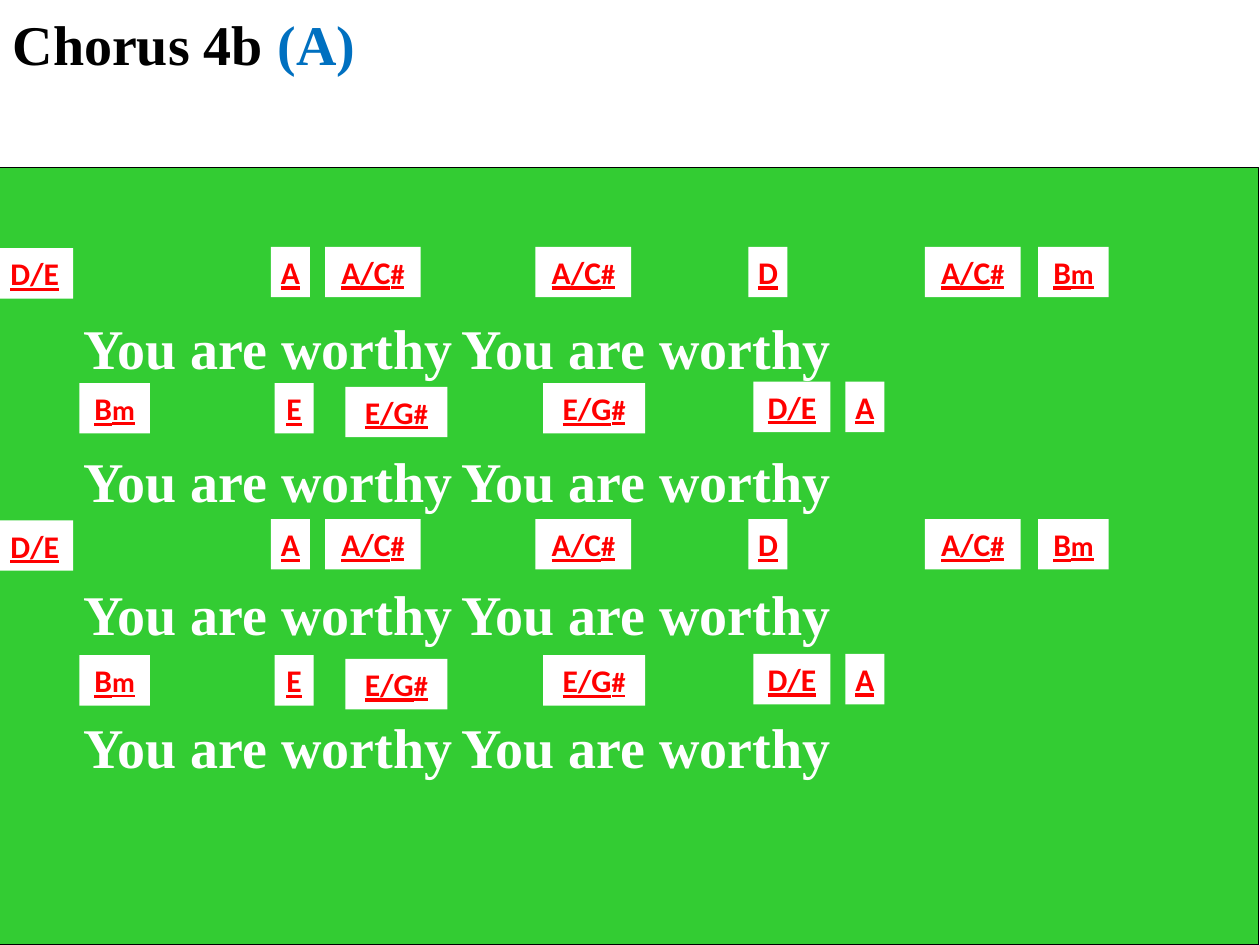
from lxml import etree
from pptx import Presentation
from pptx import util as u
from pptx.dml.color import RGBColor
from pptx.enum import shapes, text
from pptx.oxml.ns import qn

GREEN = RGBColor(0x33, 0xCC, 0x33)
WHITE = RGBColor(0xFF, 0xFF, 0xFF)
BLACK = RGBColor(0, 0, 0)
BLUE = RGBColor(0, 0x70, 0xC0)
RED = RGBColor(0xFF, 0, 0)

HEAD = {"name": "Times New Roman", "size": u.Pt(32), "bold": True}
CHORD = {"name": "Calibri", "size": u.Pt(18), "bold": True, "underline": True}
SMALL = CHORD | {"size": u.Pt(16)}

LINE = "You are worthy"
WIDTHS = {"A": 0.31, "D": 0.31, "E": 0.31, "Bm": 0.56, "D/E": 0.61,
          "A/C#": 0.76, "E/G#": 0.81}
# Chord, left and top; the whole pattern is sung twice
CHORDS = [
    ("D/E", -0.03, 1.97), ("A", 2.15, 1.96), ("A/C#", 2.58, 1.96),
    ("A/C#", 4.25, 1.96), ("D", 5.94, 1.96), ("A/C#", 7.34, 1.96),
    ("Bm", 8.24, 1.96),
    ("Bm", 0.63, 3.04), ("E", 2.18, 3.04), ("E/G#", 2.74, 3.07),
    ("E/G#", 4.31, 3.04), ("D/E", 5.98, 3.03), ("A", 6.71, 3.03),
]
REPEAT = 2.16


def put(obj, **vals):
    for key, val in vals.items():
        setattr(obj, key, val)


def place(shape, left, top, width, height):
    put(shape, left=u.Inches(left), top=u.Inches(top),
        width=u.Inches(width), height=u.Inches(height))


def add_run(para, words, form, color):
    run = para.add_run()
    run.text = words
    put(run.font, **form)
    run.font.color.rgb = color


def add_box(slide, area, fill):
    box = slide.shapes.add_shape(shapes.MSO_SHAPE.RECTANGLE,
                                 *map(u.Inches, area))
    box.shadow.inherit = False
    box.fill.solid()
    box.fill.fore_color.rgb = fill
    box.line.fill.background()
    return box


def add_panel(slide):
    panel = add_box(slide, (-0.03, 1.33, 10.02, 6.17), GREEN)
    panel.line.color.rgb = BLACK
    panel.line.width = u.Pt(0.75)
    slide.shapes.element.insert(2, panel.element)  # behind the placeholders


def add_title(slide):
    title = slide.shapes.title
    place(title, 0, 0.02, 3.33, 0.64)
    title.fill.solid()
    title.fill.fore_color.rgb = WHITE
    put(title.text_frame, auto_size=text.MSO_AUTO_SIZE.NONE, word_wrap=False,
        vertical_anchor=text.MSO_ANCHOR.MIDDLE)
    para = title.text_frame.paragraphs[0]
    para.alignment = text.PP_ALIGN.LEFT
    add_run(para, "Chorus 4b", HEAD, BLACK)
    add_run(para, " (A)", HEAD, BLUE)


def add_lyrics(slide):
    body = slide.placeholders[1]
    place(body, 0.01, 2.17, 9.99, 4.14)
    frame = body.text_frame
    put(frame, auto_size=text.MSO_AUTO_SIZE.NONE, word_wrap=True,
        margin_left=u.Inches(0.65), vertical_anchor=text.MSO_ANCHOR.TOP)
    for row in range(4):
        para = frame.add_paragraph() if row else frame.paragraphs[0]
        put(para, line_spacing=1.5, space_before=u.Pt(18.4),
            alignment=text.PP_ALIGN.LEFT)
        # No bullet, and a tab stop for the second half of the line
        props = para._p.get_or_add_pPr()
        props.set("marL", "0")
        props.set("indent", "0")
        etree.SubElement(props, qn("a:buNone"))
        tabs = etree.SubElement(props, qn("a:tabLst"))
        etree.SubElement(tabs, qn("a:tab"), pos=str(u.Inches(3.69)), algn="l")
        add_run(para, f"{LINE}\t{LINE}", HEAD, WHITE)


def add_chord(slide, name, left, top):
    box = add_box(slide, (left, top, WIDTHS[name], 0.4), WHITE)
    put(box.text_frame, word_wrap=False,
        vertical_anchor=text.MSO_ANCHOR.MIDDLE)
    para = box.text_frame.paragraphs[0]
    para.alignment = text.PP_ALIGN.CENTER
    # Sharps and minors are set smaller than the root
    root = name.rstrip("#m")
    add_run(para, root, CHORD, RED)
    if root != name:
        add_run(para, name[len(root):], SMALL, RED)


def main():
    deck = Presentation()
    put(deck, slide_width=u.Inches(10), slide_height=u.Inches(7.5))
    slide = deck.slides.add_slide(deck.slide_layouts[1])
    add_panel(slide)
    add_lyrics(slide)
    add_title(slide)
    for turn in range(2):
        for name, left, top in CHORDS:
            add_chord(slide, name, left, top + turn * REPEAT)
    deck.save("out.pptx")


if __name__ == "__main__":
    main()
